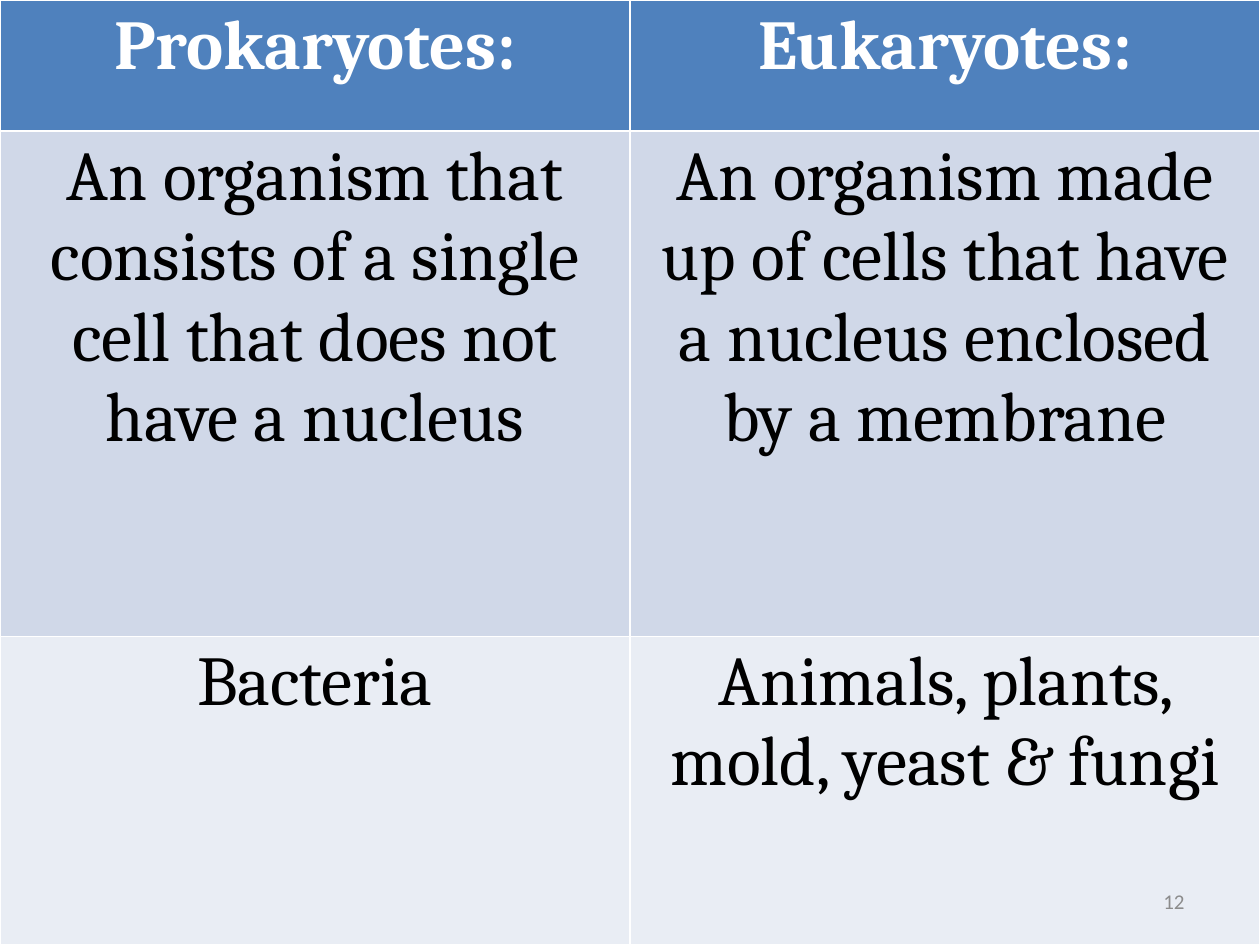
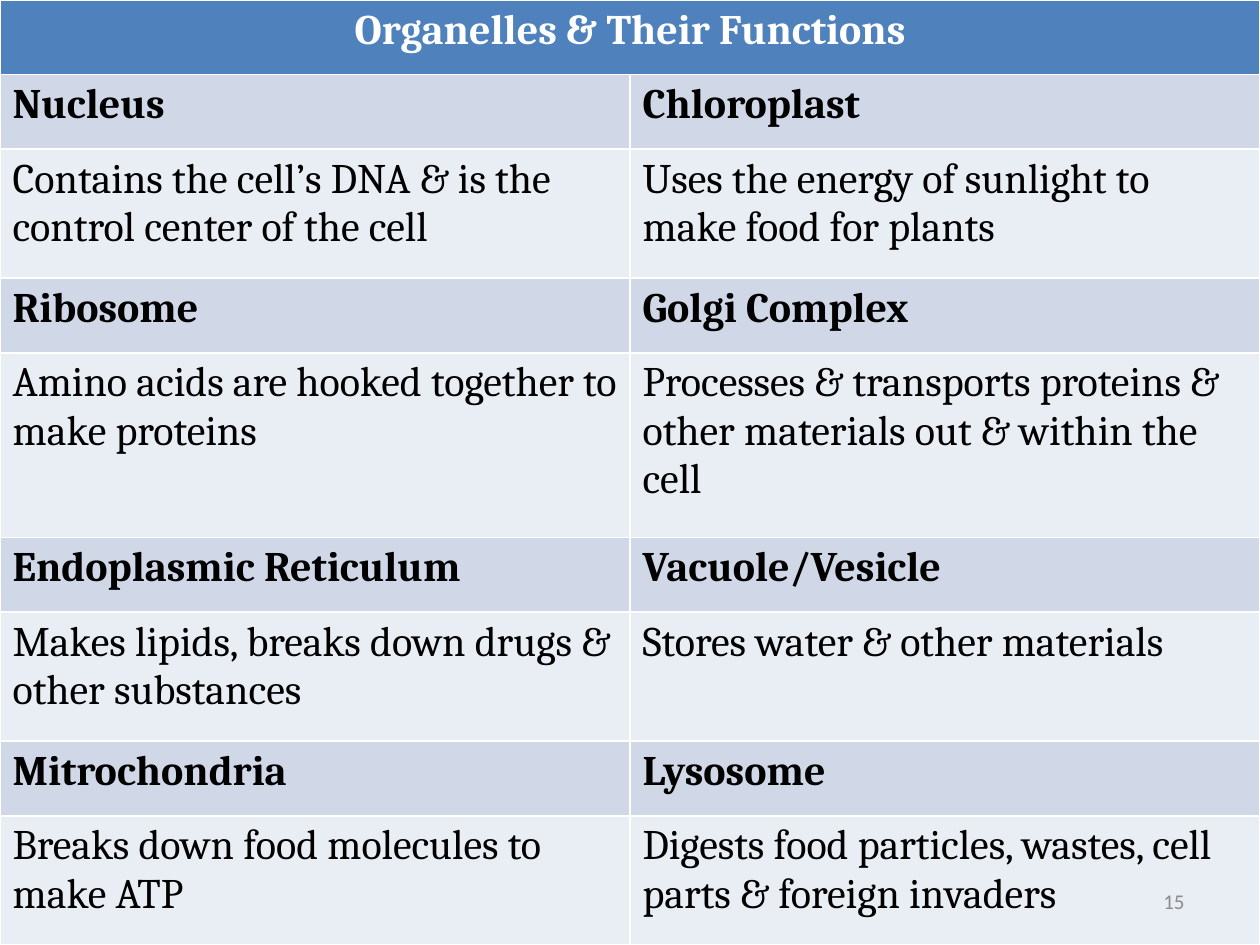
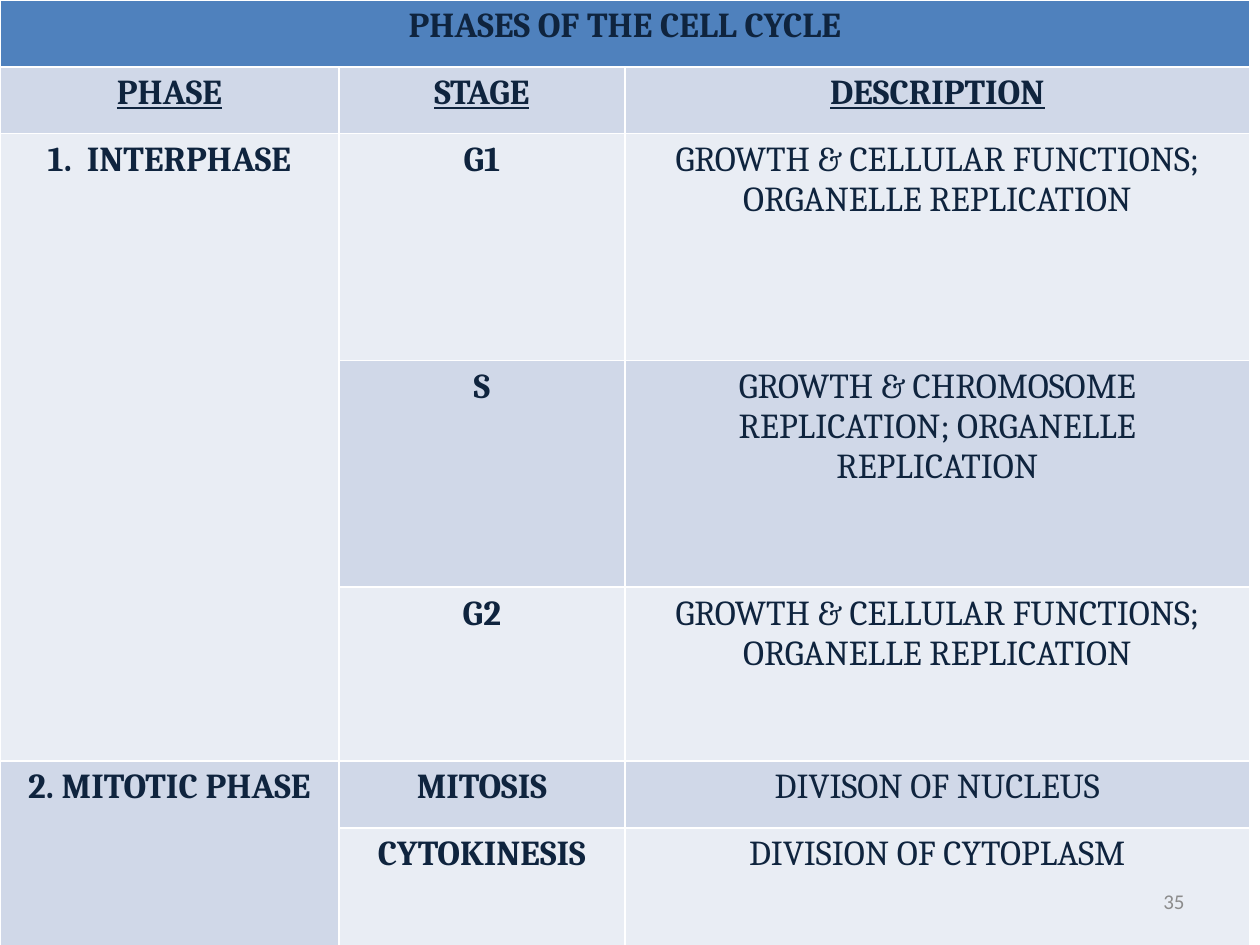
from dataclasses import dataclass

from lxml import etree
from pptx import Presentation, util as u
from pptx.dml.color import RGBColor
from pptx.enum import text
from pptx.oxml import ns

# Shared look
WIDTH, HEIGHT = u.Inches(10), u.Inches(7.5)
HEADER_FILL = "4F81BD"
BAND_FILLS = ("E9EDF4", "D0D8E8")  # even and odd body rows
WHITE, BLACK, NAVY, GREY = "FFFFFF", "000000", "0F243E", "8C8C8C"
TABLE_FONT, NUMBER_FONT = "Cambria", "Calibri"
LEFT, CENTER, RIGHT = text.PP_ALIGN.LEFT, text.PP_ALIGN.CENTER, text.PP_ALIGN.RIGHT
NUMBER_INDENT = u.Inches(0.25)


@dataclass(frozen=True)
class TableSlide:
    """A full-slide table; columns and rows are relative sizes."""
    number: int
    columns: tuple[float, ...]
    rows: tuple[float, ...]
    cells: tuple[tuple[str, ...], ...]
    size: int
    header_color: str = WHITE
    body_color: str = BLACK
    body_alignment: text.PP_ALIGN = CENTER
    bold_rows: tuple[int, ...] = (0,)
    bold_columns: tuple[int, ...] = ()
    underlined_rows: tuple[int, ...] = ()
    numbered_cells: tuple[tuple[int, int], ...] = ()
    merges: tuple[tuple[int, int, int, int], ...] = ()  # top, left, bottom, right
    width_share: float = 1.0
    height_share: float = 1.0


# Content
DOMAINS = TableSlide(
    number=12,
    columns=(1, 1),
    rows=(1.04, 4.01, 2.45),
    size=40,
    cells=(
        ("Prokaryotes:", "Eukaryotes:"),
        ("An organism that consists of a single cell that does not have a nucleus",
         "An organism made up of cells that have a nucleus enclosed by a membrane"),
        ("Bacteria", "Animals, plants, mold, yeast & fungi"),
    ),
)

ORGANELLES = TableSlide(
    number=15,
    columns=(1, 1),
    rows=(0.59, 0.59, 1.02, 0.59, 1.46, 0.59, 1.02, 0.59, 1.02),
    size=24,
    body_alignment=LEFT,
    bold_rows=(0, 1, 3, 5, 7),
    merges=((0, 0, 0, 1),),
    cells=(
        ("Organelles & Their Functions", ""),
        ("Nucleus", "Chloroplast"),
        ("Contains the cell’s DNA & is the control center of the cell",
         "Uses the energy of sunlight to make food for plants"),
        ("Ribosome", "Golgi Complex"),
        ("Amino acids are hooked together to make proteins",
         "Processes & transports proteins & other materials out & within the cell"),
        ("Endoplasmic Reticulum", "Vacuole/Vesicle"),
        ("Makes lipids, breaks down drugs & other substances",
         "Stores water & other materials"),
        ("Mitrochondria", "Lysosome"),
        ("Breaks down food molecules to make ATP",
         "Digests food particles, wastes, cell parts & foreign invaders"),
    ),
)

GAP_PHASE = "GROWTH & CELLULAR FUNCTIONS; ORGANELLE REPLICATION"
CELL_CYCLE = TableSlide(
    number=35,
    columns=(2.69, 2.27, 4.96),
    rows=(0.53, 0.53, 1.8, 1.8, 1.38, 0.53, 0.95),
    size=20,
    header_color=NAVY,
    body_color=NAVY,
    bold_rows=(0, 1),
    bold_columns=(0, 1),
    underlined_rows=(1,),
    numbered_cells=((2, 0),),
    merges=((0, 0, 0, 2), (2, 0, 4, 0), (5, 0, 6, 0)),
    width_share=0.992,
    height_share=1.003,
    cells=(
        ("PHASES OF THE CELL CYCLE", "", ""),
        ("PHASE", "STAGE", "DESCRIPTION"),
        (" INTERPHASE", "G1", GAP_PHASE),
        ("", "S", "GROWTH & CHROMOSOME REPLICATION; ORGANELLE REPLICATION"),
        ("", "G2", GAP_PHASE),
        ("2. MITOTIC PHASE", "MITOSIS", "DIVISON OF NUCLEUS"),
        ("", "CYTOKINESIS", "DIVISION OF CYTOPLASM"),
    ),
)


# Drawing
def color(hex_value: str) -> RGBColor:
    return RGBColor.from_string(hex_value)


def style_font(font, name: str, size: int, hex_value: str) -> None:
    font.name, font.size = name, u.Pt(size)
    font.color.rgb = color(hex_value)


def share_out(total: float, weights: tuple[float, ...]) -> list[int]:
    return [round(total * weight / sum(weights)) for weight in weights]


def number_paragraph(paragraph) -> None:
    properties = paragraph._p.get_or_add_pPr()
    properties.set("marL", str(NUMBER_INDENT))
    properties.set("indent", str(-NUMBER_INDENT))
    etree.SubElement(properties, ns.qn("a:buAutoNum"), type="arabicPeriod")


def fill_cell(cell, content: TableSlide, row: int, column: int) -> None:
    header = row == 0
    cell.fill.solid()
    cell.fill.fore_color.rgb = color(HEADER_FILL if header else BAND_FILLS[row % 2])
    cell.text_frame.text = content.cells[row][column]
    paragraph = cell.text_frame.paragraphs[0]
    paragraph.alignment = CENTER if header else content.body_alignment
    if (row, column) in content.numbered_cells:
        number_paragraph(paragraph)
    for run in paragraph.runs:
        style_font(run.font, TABLE_FONT, content.size,
                   content.header_color if header else content.body_color)
        run.font.bold = row in content.bold_rows or column in content.bold_columns
        run.font.underline = row in content.underlined_rows


def add_content_table(slide, content: TableSlide) -> None:
    width, height = WIDTH * content.width_share, HEIGHT * content.height_share
    # The default table style supplies the white rules between cells
    table = slide.shapes.add_table(len(content.rows), len(content.columns),
                                   0, 0, round(width), round(height)).table
    for column, size in zip(table.columns, share_out(width, content.columns)):
        column.width = size
    for row, size in zip(table.rows, share_out(height, content.rows)):
        row.height = size
    for top, left, bottom, right in content.merges:
        table.cell(top, left).merge(table.cell(bottom, right))
    for row in range(len(content.rows)):
        for column in range(len(content.columns)):
            fill_cell(table.cell(row, column), content, row, column)


def add_slide_number(slide, number: int) -> None:
    box = slide.shapes.add_textbox(u.Inches(7.17), u.Inches(6.95),
                                   u.Inches(2.33), u.Inches(0.4))
    frame = box.text_frame
    frame.word_wrap = True
    frame.vertical_anchor = text.MSO_ANCHOR.MIDDLE
    frame.text = str(number)
    paragraph = frame.paragraphs[0]
    paragraph.alignment = RIGHT
    style_font(paragraph.runs[0].font, NUMBER_FONT, 12, GREY)


def main() -> None:
    presentation = Presentation()
    presentation.slide_width, presentation.slide_height = WIDTH, HEIGHT
    blank_layout = presentation.slide_layouts[6]
    for content in (DOMAINS, ORGANELLES, CELL_CYCLE):
        slide = presentation.slides.add_slide(blank_layout)
        add_content_table(slide, content)
        add_slide_number(slide, content.number)
    presentation.save("out.pptx")


if __name__ == "__main__":
    main()
